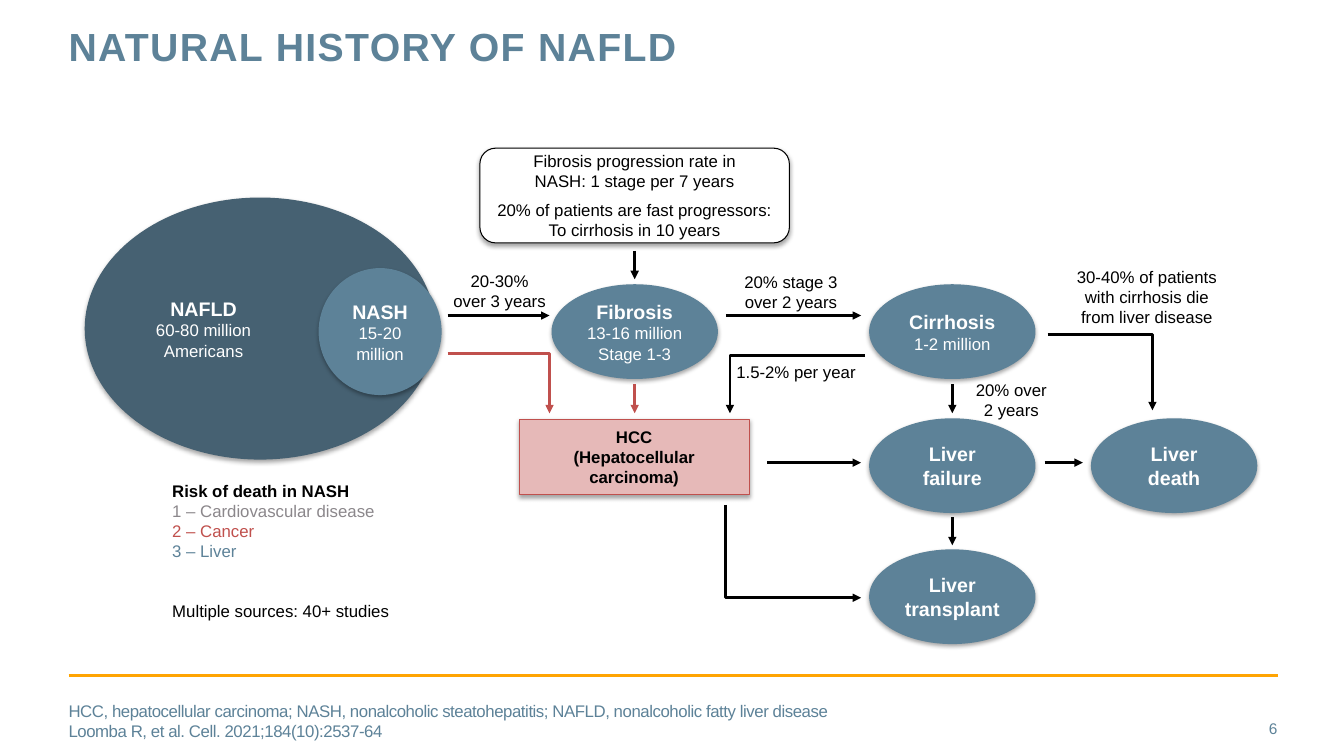
import pptx
import pptx.util
import pptx.dml.color
import pptx.enum.shapes
import pptx.enum.text
import pptx.oxml
import pptx.oxml.ns
from pptx.util import Inches

COLORS = {"blue": "5D8298", "navy": "466172", "red": "C0504D", "pink": "E6B9B8",
          "gray": "8B878B", "orange": "FFA402", "black": "000000", "white": "FFFFFF"}

# Content: text is a list of paragraphs, a paragraph is a list of (text, size, bold, colour)
TITLE = [[("NATURAL HISTORY OF NAFLD", 28, True, "blue")]]
FOOTNOTE = [
    [("HCC, hepatocellular carcinoma; NASH, nonalcoholic steatohepatitis; "
      "NAFLD, nonalcoholic fatty liver disease", 12, False, "blue")],
    [("Loomba R, et al. Cell. 2021;184(10):2537-64", 12, False, "blue")]]
PAGE_NUMBER = [[("6", 11, False, "blue")]]

COL_X = {"fibrosis": 5.47, "cirrhosis": 8.62, "death": 10.82}
ROW_Y = {"stage": 2.82, "failure": 4.15, "transplant": 5.45}
STAGE_W, STAGE_H = 1.65, 0.94
STAGES = [  # column, row, name, detail
    ("fibrosis", "stage", "Fibrosis", "13-16 million\nStage 1-3"),
    ("cirrhosis", "stage", "Cirrhosis", "1-2 million"),
    ("cirrhosis", "failure", "Liver failure", ""),
    ("cirrhosis", "transplant", "Liver transplant", ""),
    ("death", "failure", "Liver death", "")]
POPULATIONS = [  # box, fill, name, detail, right inset
    ((0.84, 1.96, 3.48, 2.6), "navy", "NAFLD", "60-80 million\nAmericans", 1.22),
    ((3.16, 2.66, 1.22, 1.26), "blue", "NASH", "15-20 million", 0.1)]

RATES = [
    ((10.57, 2.57, 1.61, 0.75), "30-40% of patients\nwith cirrhosis die\nfrom liver disease"),
    ((7.04, 2.65, 1.61, 0.49), "20% stage 3\nover 2 years"),
    ((4.15, 2.64, 1.61, 0.49), "20-30%\nover 3 years"),
    ((7.09, 3.53, 1.61, 0.31), "1.5-2% per year"),
    ((9.49, 3.72, 1.08, 0.49), "20% over\n2 years")]
RISKS = [[("Risk of death in NASH", 12, True, "black")],
         [("1 – Cardiovascular disease", 12, False, "gray")],
         [("2 – Cancer", 12, False, "red")],
         [("3 – Liver", 12, False, "blue")]]
SOURCES = [[("Multiple sources: 40+ studies", 12, False, "black")]]
HCC = [[("HCC\n(Hepatocellular\ncarcinoma)", 12, True, "black")]]
PROGRESSION = [
    [("Fibrosis progression rate in\nNASH: 1 stage per 7 years", 12, False, "black")],
    [("20% of patients are fast progressors:", 12, False, "black")],
    [("To cirrhosis in 10 years", 12, False, "black")]]

FIBROSIS_MID = COL_X["fibrosis"] + STAGE_W / 2
CIRRHOSIS_MID = COL_X["cirrhosis"] + STAGE_W / 2
TIP_X = 8.54    # arrows stop here, just left of the cirrhosis column
FLOW_Y, FAILURE_Y = 3.13, 4.59
ARROWS = [  # colour, points from start to tip
    ("black", [(4.44, FLOW_Y), (5.45, FLOW_Y)]),
    ("black", [(7.2, FLOW_Y), (TIP_X, FLOW_Y)]),
    ("black", [(7.61, FAILURE_Y), (TIP_X, FAILURE_Y)]),
    ("black", [(10.36, FAILURE_Y), (10.74, FAILURE_Y)]),
    ("black", [(FIBROSIS_MID, 2.49), (FIBROSIS_MID, 2.77)]),
    ("red", [(FIBROSIS_MID, 3.81), (FIBROSIS_MID, 4.1)]),
    ("black", [(CIRRHOSIS_MID, 3.81), (CIRRHOSIS_MID, 4.1)]),
    ("black", [(CIRRHOSIS_MID, 5.13), (CIRRHOSIS_MID, 5.41)]),
    ("black", [(10.39, 3.32), (11.43, 3.32), (11.43, 4.07)]),
    ("black", [(8.58, 3.53), (7.24, 3.53), (7.24, 4.1)]),
    ("red", [(4.44, 3.51), (5.45, 3.51), (5.45, 4.1)]),
    ("black", [(7.2, 5.01), (7.2, 5.93), (TIP_X, 5.93)])]

SHAPE = pptx.enum.shapes.MSO_SHAPE
ALIGN = pptx.enum.text.PP_ALIGN
ANCHOR = pptx.enum.text.MSO_ANCHOR

prs = pptx.Presentation()
prs.slide_width, prs.slide_height = Inches(13.33), Inches(7.5)
slide = prs.slides.add_slide(prs.slide_layouts[6])


def rgb(name):
    return pptx.dml.color.RGBColor.from_string(COLORS[name])


def add_xml(parent, tag, **attrs):
    child = pptx.oxml.parse_xml(f"<a:{tag} {pptx.oxml.ns.nsdecls('a')}/>")
    for key, value in attrs.items():
        child.set(key, str(value))
    parent.append(child)
    return child


def write(sp, paragraphs, align=ALIGN.CENTER, anchor=ANCHOR.MIDDLE,
          insets=(0.1, 0.05, 0.1, 0.05), spacing=0):
    tf = sp.text_frame
    tf.word_wrap = True
    tf.vertical_anchor = anchor
    tf.margin_left, tf.margin_top, tf.margin_right, tf.margin_bottom = map(Inches, insets)
    for i, runs in enumerate(paragraphs):
        p = tf.paragraphs[0] if i == 0 else tf.add_paragraph()
        p.alignment = align
        for text, size, bold, color in runs:
            for n, line in enumerate(text.split("\n")):
                if n:
                    p.add_line_break()
                if not line:
                    continue
                r = p.add_run()
                r.text = line
                r.font.name, r.font.size, r.font.bold = "Arial", pptx.util.Pt(size), bold
                r.font.color.rgb = rgb(color)
                if spacing:
                    r.font._element.set("spc", str(round(spacing * 100)))
    return tf


def add_text(box, paragraphs, **style):
    return write(slide.shapes.add_textbox(*map(Inches, box)), paragraphs, **style)


def add_box(kind, box, fill, paragraphs, line=None, **style):
    sp = slide.shapes.add_shape(kind, *map(Inches, box))
    sp.fill.solid()
    sp.fill.fore_color.rgb = rgb(fill)
    if line:
        sp.line.color.rgb = rgb(line)
        sp.line.width = pptx.util.Pt(0.75)
    else:
        sp.line.fill.background()
    sp.shadow.inherit = False
    effects = sp._element.spPr.find(pptx.oxml.ns.qn("a:effectLst"))
    shadow = add_xml(effects, "outerShdw", blurRad=40000, dist=23000, dir=5400000, rotWithShape=0)
    add_xml(add_xml(shadow, "srgbClr", val=COLORS["black"]), "alpha", val=35000)
    return write(sp, paragraphs, **style)


def named(name, detail):
    runs = [(name + ("\n" if detail else ""), 14, True, "white")]
    return [runs + ([(detail, 12, False, "white")] if detail else [])]


def add_line(points, color, arrow=True):
    points = [(Inches(x), Inches(y)) for x, y in points]
    if len(points) == 2:
        sp = slide.shapes.add_connector(pptx.enum.shapes.MSO_CONNECTOR.STRAIGHT,
                                        *points[0], *points[1])
    else:
        builder = slide.shapes.build_freeform(*points[0])
        builder.add_line_segments(points[1:], close=False)
        sp = builder.convert_to_shape()
        sp.fill.background()
    sp.line.color.rgb = rgb(color)
    sp.line.width = pptx.util.Pt(2)
    if arrow:
        add_xml(sp.line._get_or_add_ln(), "tailEnd", type="triangle")
    add_xml(sp._element.spPr, "effectLst")


# Title, footer rule, footnote and page number
add_line([(0.68, 6.7), (12.68, 6.7)], "orange", arrow=False)
title = add_text((0.68, 0.27, 9.56, 0.88), TITLE, align=ALIGN.LEFT, anchor=ANCHOR.TOP,
                 insets=(0, 0, 0, 0), spacing=1)
title.paragraphs[0].line_spacing = pptx.util.Pt(30)
add_text((0.68, 6.95, 11.13, 0.4), FOOTNOTE, align=ALIGN.LEFT, insets=(0, 0, 0, 0), spacing=-0.3)
add_text((11.81, 7.03, 0.86, 0.4), PAGE_NUMBER, align=ALIGN.RIGHT, insets=(0, 0, 0, 0))

# Disease stages and populations
for col, row, name, detail in STAGES:
    add_box(SHAPE.OVAL, (COL_X[col], ROW_Y[row], STAGE_W, STAGE_H), "blue", named(name, detail))
for box, fill, name, detail, right in POPULATIONS:
    add_box(SHAPE.OVAL, box, fill, named(name, detail), insets=(0.1, 0.05, right, 0.05))

# Rates and side notes
for box, text in RATES:
    add_text(box, [[(text, 12, False, "black")]])
add_text((1.61, 4.79, 2.67, 0.75), RISKS, align=ALIGN.LEFT)
add_text((1.61, 5.9, 2.48, 0.31), SOURCES, align=ALIGN.LEFT)

# Cancer and progression boxes
add_box(SHAPE.RECTANGLE, (5.15, 4.16, 2.28, 0.75), "pink", HCC, line="red")
progression = add_box(SHAPE.ROUNDED_RECTANGLE, (4.76, 1.47, 3.07, 0.94), "white",
                      PROGRESSION, line="black")
progression.paragraphs[0].space_after = pptx.util.Pt(6)

# Arrows
for color, points in ARROWS:
    add_line(points, color)

prs.save("out.pptx")
